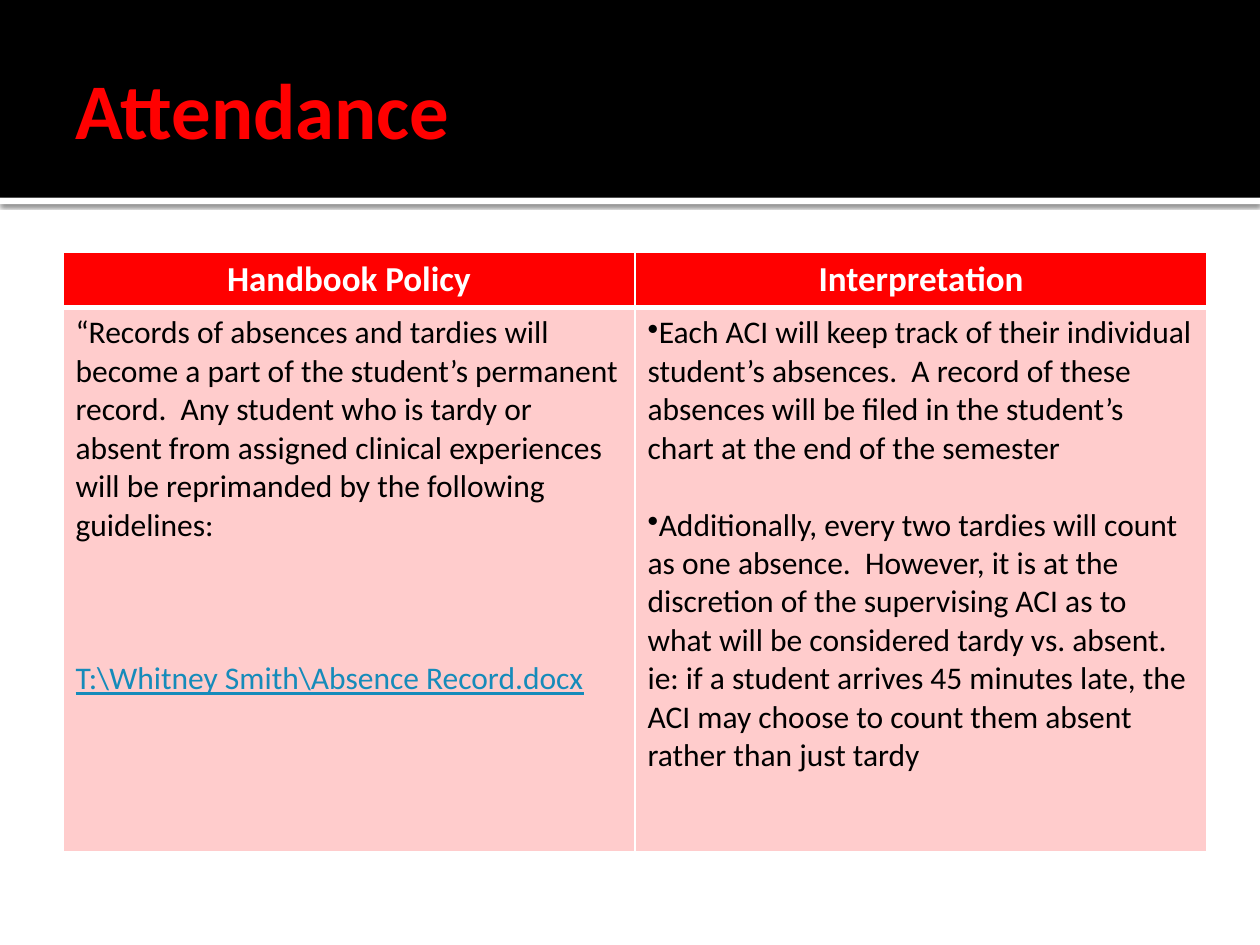
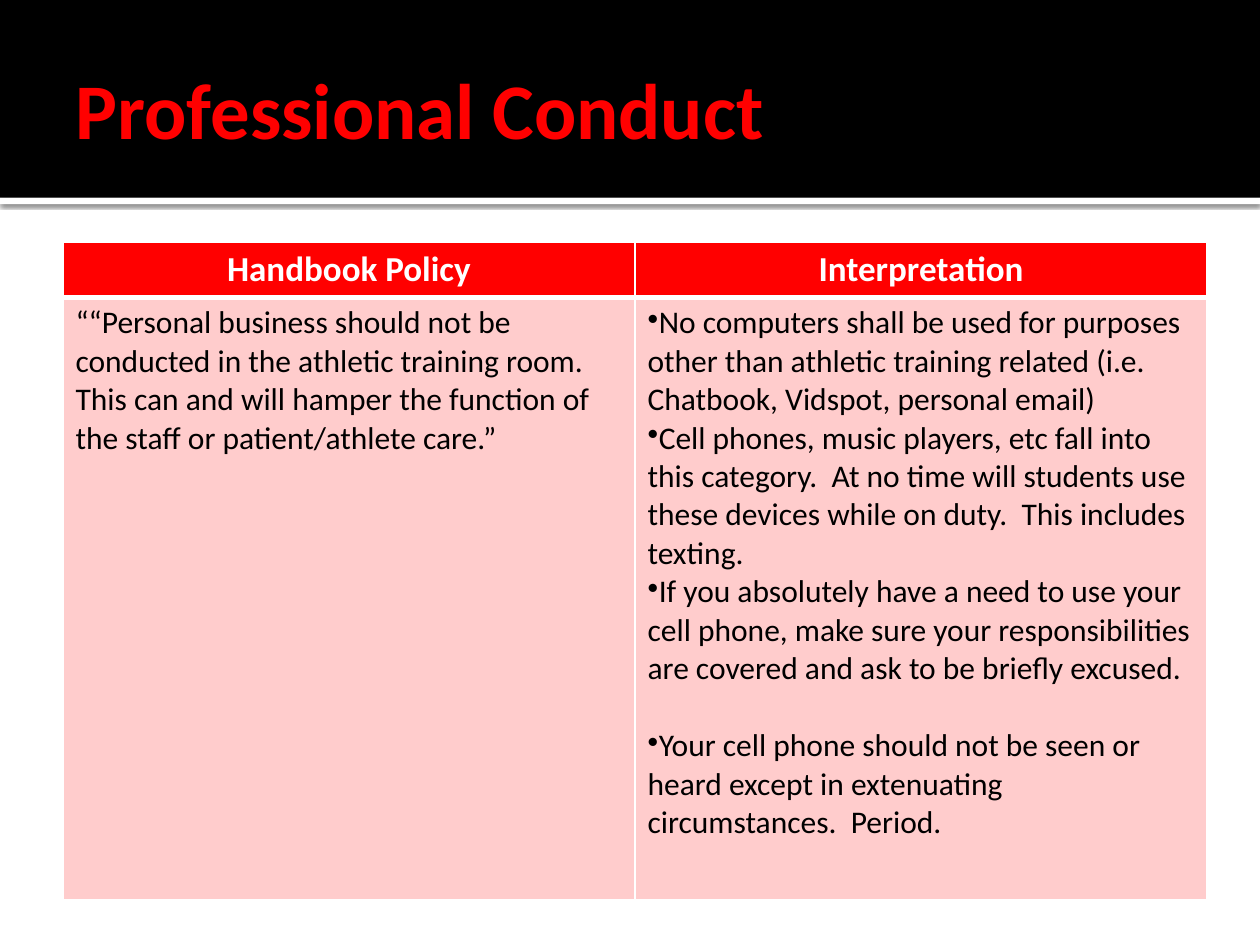
from lxml.etree import SubElement
from pptx import Presentation
from pptx.dml.color import RGBColor
from pptx.enum.shapes import MSO_SHAPE
from pptx.enum.text import MSO_ANCHOR, MSO_AUTO_SIZE, PP_ALIGN
from pptx.oxml import parse_xml
from pptx.oxml.ns import nsdecls, qn
from pptx.util import Inches, Pt

BLACK = RGBColor(0, 0, 0)
WHITE = RGBColor(255, 255, 255)
RED = RGBColor(255, 0, 0)
PINK = RGBColor(255, 204, 204)
LINK_BLUE = RGBColor(0x16, 0x8B, 0xBA)

FONT = "Calibri"
WIDTH, HEIGHT = Inches(10), Inches(7.5)
MARGIN = 0.05
BAND_HEIGHT = Inches(1.57)
STRIPE_HEIGHT = Inches(0.05)
HEADER_HEIGHT = Inches(0.43)
COLUMN_WIDTH = Inches(4.54)
LINE_GAP = 22
HEADINGS = ("Handbook Policy", "Interpretation")

ATTENDANCE_POLICY = [
    dict(text="“Records of absences and tardies will become a part of the student’s "
              "permanent record.  Any student who is tardy or absent from assigned clinical "
              "experiences will be reprimanded by the following guidelines:"),
    dict(text="T:\\Whitney Smith\\Absence Record.docx", color=LINK_BLUE,
         underline=True, before=3 * LINE_GAP),
]
ATTENDANCE_NOTES = [
    dict(text="Each ACI will keep track of their individual student’s absences.  A record "
              "of these absences will be filed in the student’s chart at the end of the "
              "semester", bullet=True),
    dict(text="Additionally, every two tardies will count as one absence.  However, it is at "
              "the discretion of the supervising ACI as to what will be considered tardy vs. "
              "absent.  ie: if a student arrives 45 minutes late, the ACI may choose to count "
              "them absent rather than just tardy", bullet=True, before=LINE_GAP),
]
CONDUCT_POLICY = [
    dict(text="““Personal business should not be conducted in the athletic training room.  "
              "This can and will hamper the function of the staff or patient/athlete care.”"),
]
CONDUCT_NOTES = [
    dict(text="No computers shall be used for purposes other than athletic training related "
              "(i.e. Chatbook, Vidspot, personal email)", bullet=True),
    dict(text="Cell phones, music players, etc fall into this category.  At no time will "
              "students use these devices while on duty.  This includes texting.", bullet=True),
    dict(text="If you absolutely have a need to use your cell phone, make sure your "
              "responsibilities are covered and ask to be briefly excused.", bullet=True),
    dict(text="Your cell phone should not be seen or heard except in extenuating "
              "circumstances.  Period.", bullet=True, before=LINE_GAP),
]


def write(para, text, size=18, color=BLACK, bold=False, underline=False,
          align=PP_ALIGN.LEFT, before=0, bullet=False):
    para.alignment = align
    para.space_before = Pt(before)
    if bullet:
        SubElement(para._p.get_or_add_pPr(), qn("a:buChar")).set("char", "•")
    span = para.add_run()
    span.text = text
    span.font.name = FONT
    span.font.size = Pt(size)
    span.font.bold = bold
    span.font.underline = underline
    span.font.color.rgb = color


def add_band(page, layout, top, height, color, shadow=False):
    band = page.shapes.add_shape(MSO_SHAPE.RECTANGLE, 0, top, WIDTH, height)
    band.shadow.inherit = False
    band.fill.solid()
    band.fill.fore_color.rgb = color
    band.line.fill.background()
    if shadow:
        effects = band.element.spPr.find(qn("a:effectLst"))
        effects.append(parse_xml(
            f'<a:outerShdw {nsdecls("a")} blurRad="{Pt(2.5)}" dist="{Pt(0.8)}" dir="5400000" '
            'rotWithShape="0"><a:srgbClr val="000000"><a:alpha val="60000"/></a:srgbClr>'
            '</a:outerShdw>'))
    tree = layout.shapes.element
    band.element.nvSpPr.cNvPr.set("id", str(100 + len(tree)))
    tree.insert(2, band.element)


def style_layout(page, layout):
    add_band(page, layout, 0, BAND_HEIGHT, BLACK)
    add_band(page, layout, BAND_HEIGHT, STRIPE_HEIGHT, WHITE, shadow=True)
    title = layout.placeholders[0]
    title.left, title.top = int(WIDTH * MARGIN), Inches(0.17)
    title.width, title.height = int(WIDTH * (1 - 2 * MARGIN)), Inches(1.37)
    frame = title.text_frame
    frame.vertical_anchor = MSO_ANCHOR.MIDDLE
    frame.auto_size = MSO_AUTO_SIZE.NONE
    frame.margin_left = Inches(0.1)
    frame.margin_right = frame.margin_top = frame.margin_bottom = Inches(0.05)


def set_borders(cell, top, bottom):
    properties = cell._tc.get_or_add_tcPr()
    sides = (("lnL", 1), ("lnR", 1), ("lnT", top), ("lnB", bottom))
    for place, (side, points) in enumerate(sides):
        properties.insert(place, parse_xml(
            f'<a:{side} {nsdecls("a")} w="{Pt(points)}"><a:solidFill>'
            f'<a:srgbClr val="{WHITE}"/></a:solidFill></a:{side}>'))


def fill_cell(cell, paragraphs, color, top, bottom):
    cell.fill.solid()
    cell.fill.fore_color.rgb = color
    set_borders(cell, top, bottom)
    frame = cell.text_frame
    for index, content in enumerate(paragraphs):
        para = frame.add_paragraph() if index else frame.paragraphs[0]
        write(para, **content)


def add_policy_table(page, top, body_height, bodies):
    table = page.shapes.add_table(2, 2, int(WIDTH * MARGIN), top, 2 * COLUMN_WIDTH,
                                  HEADER_HEIGHT + body_height).table
    table.rows[0].height, table.rows[1].height = HEADER_HEIGHT, body_height
    for column, (heading, body) in enumerate(zip(HEADINGS, bodies)):
        table.columns[column].width = COLUMN_WIDTH
        header = dict(text=heading, size=20, color=WHITE, bold=True, align=PP_ALIGN.CENTER)
        fill_cell(table.cell(0, column), [header], RED, 1, 3)
        fill_cell(table.cell(1, column), body, PINK, 3, 1)


def add_policy_page(page, title, top, body_height, bodies):
    write(page.shapes.title.text_frame.paragraphs[0], title, size=45, color=RED, bold=True)
    add_policy_table(page, top, body_height, bodies)


def main():
    deck = Presentation()
    deck.slide_width, deck.slide_height = WIDTH, HEIGHT
    layout = deck.slide_layouts.get_by_name("Title Only")
    attendance = deck.slides.add_slide(layout)
    conduct = deck.slides.add_slide(layout)
    style_layout(attendance, layout)
    add_policy_page(attendance, "Attendance", Inches(2), Inches(4.32),
                    (ATTENDANCE_POLICY, ATTENDANCE_NOTES))
    add_policy_page(conduct, "Professional Conduct", Inches(1.92), Inches(4.78),
                    (CONDUCT_POLICY, CONDUCT_NOTES))
    deck.save("out.pptx")


if __name__ == "__main__":
    main()
